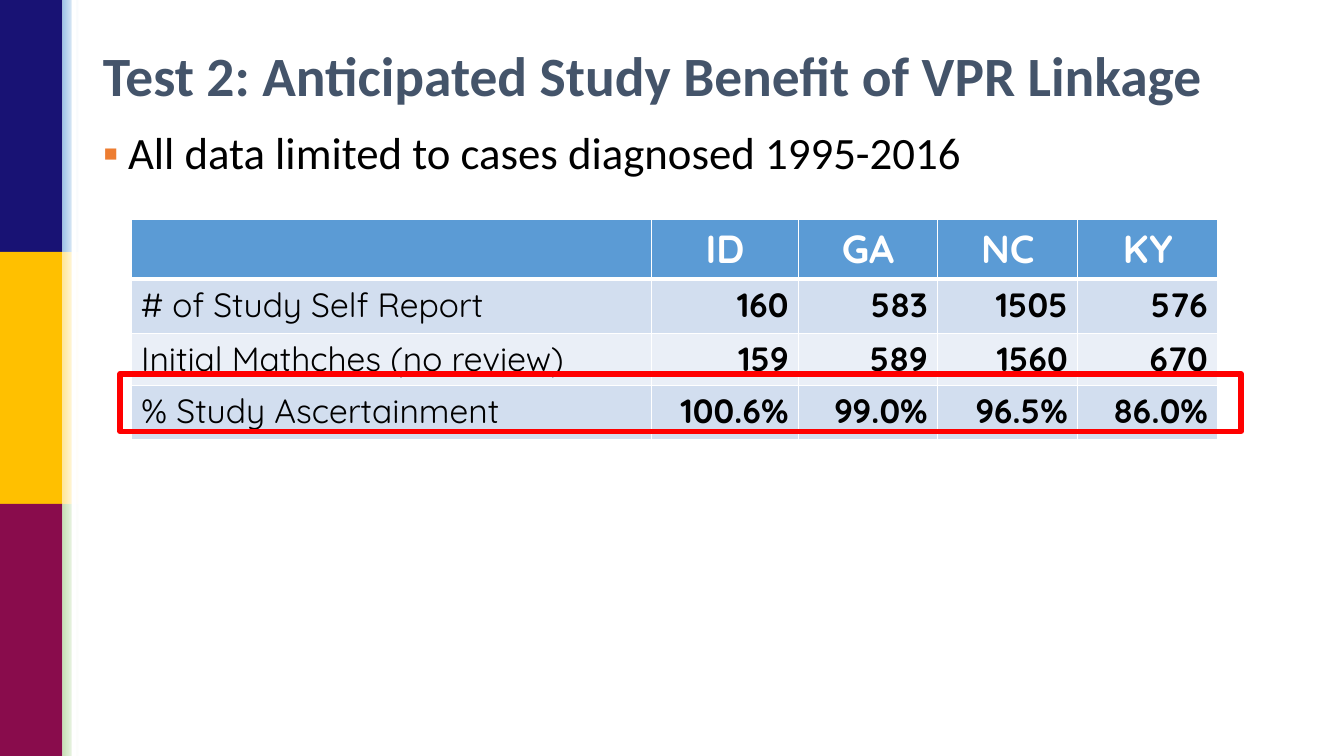
from dataclasses import dataclass

from lxml import etree
from pptx import Presentation
from pptx import util as u
from pptx.dml.color import RGBColor
from pptx.enum import shapes, text
from pptx.oxml import ns


@dataclass(frozen=True)
class Theme:
    heading_font: str = "Calibri"
    table_font: str = "Quicksand"
    title_size: float = 39.6
    body_size: int = 32
    header_size: int = 28
    cell_size: int = 24
    title: str = "44546A"
    ink: str = "000000"
    white: str = "FFFFFF"
    bullet: str = "ED7D31"
    header: str = "5B9BD5"
    row_bands: tuple = ("D2DEEF", "EAEFF7")
    highlight: str = "FF0000"
    # Band colour and the tint that fades beside it, top to bottom
    side_bands: tuple = (("181274", "9DC3E6"), ("FFC000", "FFE699"),
                         ("890C4C", "C5E0B4"))


def rgb(value):
    return RGBColor.from_string(value)


def add_xml(parent, tag, **attributes):
    return etree.SubElement(parent, ns.qn(tag), **attributes)


class SlideBuilder:
    def __init__(self, page, theme):
        self.page = page
        self.theme = theme

    def apply(self, target, values):
        for name, value in values.items():
            setattr(target, name, value)

    def style_font(self, paragraph, font, size, color, bold=False):
        self.apply(paragraph.font, {"name": font, "size": u.Pt(size), "bold": bold})
        paragraph.font.color.rgb = rgb(color)

    def place(self, item, area):
        names = ("left", "top", "width", "height")
        self.apply(item, dict(zip(names, map(u.Inches, area))))

    def rectangle(self, area, fill=None, fade=None, line=None, weight=0):
        box = self.page.shapes.add_shape(
            shapes.MSO_SHAPE.RECTANGLE, *map(u.Inches, area))
        box.shadow.inherit = False
        if fade:
            box.fill.gradient()
            box.fill.gradient_angle = 0
            for stop, color in zip(box.fill.gradient_stops, fade):
                stop.color.rgb = rgb(color)
        elif fill:
            box.fill.solid()
            box.fill.fore_color.rgb = rgb(fill)
        else:
            box.fill.background()
        if line:
            box.line.color.rgb = rgb(line)
            box.line.width = u.Pt(weight)
        else:
            box.line.fill.background()

    def placeholder(self, box, area, words, anchor):
        self.place(box, area)
        self.apply(box.text_frame, {
            "text": words, "word_wrap": True, "vertical_anchor": anchor,
            "auto_size": text.MSO_AUTO_SIZE.NONE})
        paragraph = box.text_frame.paragraphs[0]
        self.apply(paragraph, {"alignment": text.PP_ALIGN.LEFT,
                               "line_spacing": 0.9, "space_before": u.Pt(0)})
        return paragraph

    def title(self, words, area):
        paragraph = self.placeholder(
            self.page.shapes.title, area, words, text.MSO_ANCHOR.MIDDLE)
        self.style_font(paragraph, self.theme.heading_font,
                        self.theme.title_size, self.theme.title, True)

    def bullet(self, words, area):
        paragraph = self.placeholder(
            self.page.placeholders[1], area, words, text.MSO_ANCHOR.TOP)
        properties = paragraph._p.get_or_add_pPr()
        properties.set("marL", str(u.Inches(0.25)))
        properties.set("indent", str(-u.Inches(0.25)))
        color = add_xml(properties, "a:buClr")
        add_xml(color, "a:srgbClr", val=self.theme.bullet)
        add_xml(properties, "a:buChar", char="▪")
        self.style_font(paragraph, self.theme.heading_font,
                        self.theme.body_size, self.theme.ink)

    def cell_borders(self, cell, bottom, top):
        properties = cell._tc.get_or_add_tcPr()
        widths = {"a:lnL": 1, "a:lnR": 1, "a:lnT": top, "a:lnB": bottom}
        for position, (tag, width) in enumerate(widths.items()):
            line = etree.Element(ns.qn(tag), w=str(u.Pt(width)))
            add_xml(add_xml(line, "a:solidFill"), "a:srgbClr", val=self.theme.white)
            properties.insert(position, line)

    def table(self, rows, area, widths, heights):
        theme = self.theme
        grid = self.page.shapes.add_table(
            len(rows), len(widths), *map(u.Inches, area)).table
        for column, width in zip(grid.columns, widths):
            column.width = u.Inches(width)
        for row, height in zip(grid.rows, heights):
            row.height = u.Inches(height)
        for r, row in enumerate(rows):
            for c, words in enumerate(row):
                cell = grid.cell(r, c)
                is_header = r == 0
                cell.fill.solid()
                cell.fill.fore_color.rgb = rgb(
                    theme.header if is_header else theme.row_bands[(r - 1) % 2])
                self.cell_borders(cell, 3 if is_header else 1, 3 if r == 1 else 1)
                cell.text = words
                paragraph = cell.text_frame.paragraphs[0]
                if is_header:
                    paragraph.alignment = text.PP_ALIGN.CENTER
                elif c > 0:
                    paragraph.alignment = text.PP_ALIGN.RIGHT
                self.style_font(
                    paragraph, theme.table_font,
                    theme.header_size if is_header else theme.cell_size,
                    theme.white if is_header else theme.ink, is_header or c > 0)


def main():
    deck = Presentation()
    deck.slide_width, deck.slide_height = u.Inches(13.33), u.Inches(7.5)
    theme = Theme()
    slide = SlideBuilder(deck.slides.add_slide(deck.slide_layouts[1]), theme)

    # Coloured bands down the left edge
    band_height = 2.5
    for index, (solid, tint) in enumerate(theme.side_bands):
        top = index * band_height
        slide.rectangle((0, top, 0.62, band_height), fill=solid)
        slide.rectangle((0.62, top, 0.16, band_height), fade=(tint, theme.white))
    slide.rectangle((0.71, 0, 0.05, 7.5), fill=theme.white)

    # Results by state
    slide.table(
        [("", "ID", "GA", "NC", "KY"),
         ("# of Study Self Report", "160", "583", "1505", "576"),
         ("Initial Mathches (no review)", "159", "589", "1560", "670"),
         ("% Study Ascertainment", "100.6%", "99.0%", "96.5%", "86.0%")],
        (1.3, 2.18, 10.77, 2.14),
        widths=(5.16, 1.46, 1.38, 1.39, 1.39), heights=(0.48, 0.54, 0.41, 0.54))

    # Title and bullet
    slide.title("Test 2: Anticipated Study Benefit of VPR Linkage",
                (0.92, 0.35, 11.67, 0.85))
    slide.bullet("All data limited to cases diagnosed 1995-2016",
                 (0.92, 1.25, 12.41, 5.26))

    # Frame around the ascertainment row
    slide.rectangle((1.19, 3.71, 11.12, 0.57), line=theme.highlight, weight=4)

    deck.save("out.pptx")


if __name__ == "__main__":
    main()
